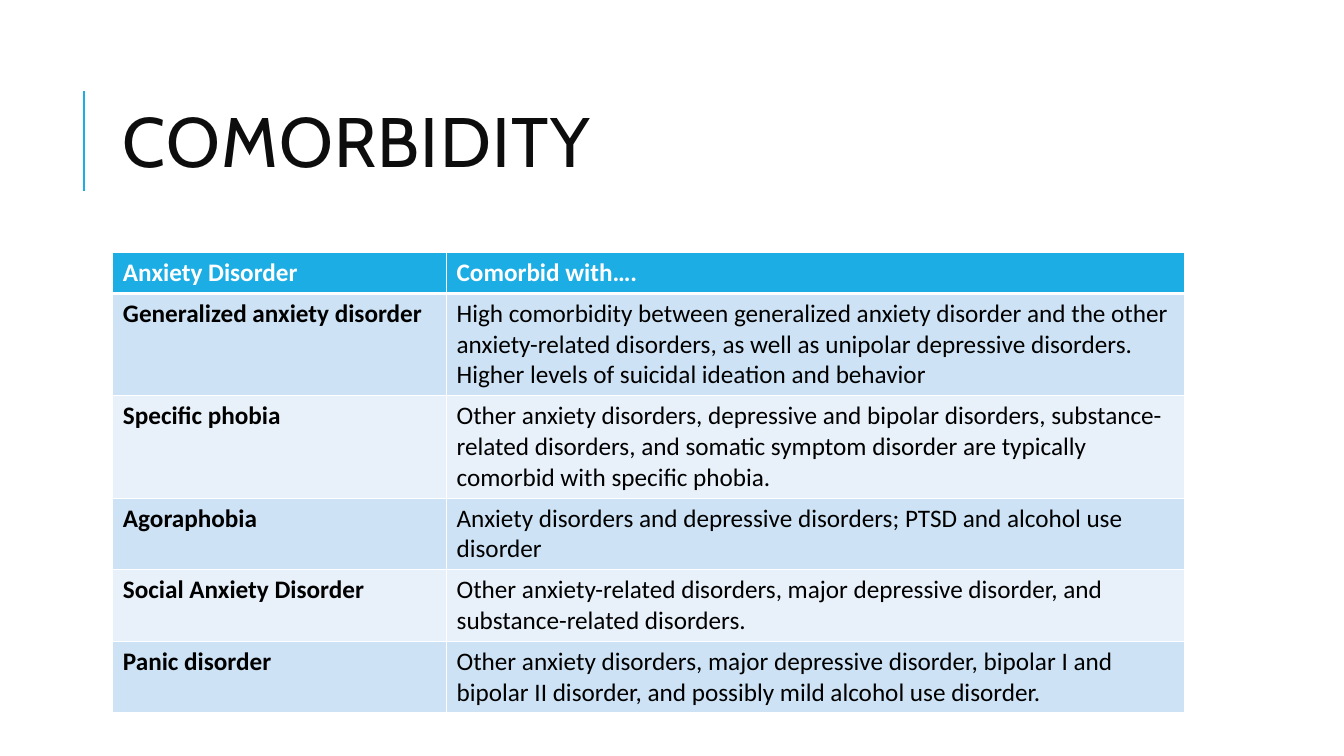
from dataclasses import dataclass

from lxml import etree
from pptx import Presentation
from pptx import util as u
from pptx.dml.color import RGBColor
from pptx.enum import shapes, text
from pptx.oxml import ns


@dataclass(frozen=True)
class Theme:
    accent: str = "1CADE4"
    heading: str = "0D0D0D"
    body: str = "000000"
    white: str = "FFFFFF"
    bands: tuple = ("CDE3F5", "E8F1FA")
    title_font: str = "Cabin"
    body_font: str = "Calibri"
    title_size: int = 50
    body_size: int = 18
    rule: float = 1.5
    thin: int = 1
    thick: int = 3


class Deck:
    def __init__(self, theme):
        self.theme = theme
        self.prs = Presentation()
        self.prs.slide_width = u.Inches(13.33)
        self.prs.slide_height = u.Inches(7.5)
        self.slide = self.prs.slides.add_slide(self.prs.slide_layouts[5])

    def x(self, percent):
        return round(self.prs.slide_width * percent / 100)

    def y(self, percent):
        return round(self.prs.slide_height * percent / 100)

    def add_words(self, paragraph, words, font, size, color, bold=False):
        run = paragraph.add_run()
        run.text = words
        run.font.name = font
        run.font.size = u.Pt(size)
        run.font.bold = bold
        run.font.color.rgb = RGBColor.from_string(color)
        return run

    def title(self, words, left, top, width, height):
        heading = self.slide.shapes.title
        heading.left, heading.top = self.x(left), self.y(top)
        heading.width, heading.height = self.x(width), self.y(height)
        frame = heading.text_frame
        frame.word_wrap = True
        frame.auto_size = text.MSO_AUTO_SIZE.NONE
        frame.vertical_anchor = text.MSO_ANCHOR.MIDDLE
        paragraph = frame.paragraphs[0]
        paragraph.alignment = text.PP_ALIGN.LEFT
        paragraph.line_spacing = 0.8
        run = self.add_words(paragraph, words, self.theme.title_font,
                             self.theme.title_size, self.theme.heading)
        run._r.get_or_add_rPr().set("spc", "100")

    def vertical_rule(self, left, top, bottom):
        rule = self.slide.shapes.add_connector(
            shapes.MSO_CONNECTOR.STRAIGHT,
            self.x(left), self.y(bottom), self.x(left), self.y(top))
        rule.line.color.rgb = RGBColor.from_string(self.theme.accent)
        rule.line.width = u.Pt(self.theme.rule)
        etree.SubElement(rule._element.spPr, ns.qn("a:effectLst"))

    def border(self, cell, side, width):
        line = etree.SubElement(cell._tc.get_or_add_tcPr(),
                                ns.qn(f"a:ln{side}"), w=str(u.Pt(width)))
        fill = etree.SubElement(line, ns.qn("a:solidFill"))
        etree.SubElement(fill, ns.qn("a:srgbClr"), val=self.theme.white)

    def cell(self, cell, words, fill, color, bold, bottom):
        for side in "LRT":
            self.border(cell, side, self.theme.thin)
        self.border(cell, "B", bottom)
        cell.fill.solid()
        cell.fill.fore_color.rgb = RGBColor.from_string(fill)
        self.add_words(cell.text_frame.paragraphs[0], words,
                       self.theme.body_font, self.theme.body_size, color, bold)

    def table(self, rows, left, top, widths, row_height):
        theme = self.theme
        grid = self.slide.shapes.add_table(
            len(rows), len(widths), self.x(left), self.y(top),
            self.x(sum(widths)), self.y(row_height * len(rows))).table
        for column, width in zip(grid.columns, widths):
            column.width = self.x(width)
        for r, row in enumerate(rows):
            header = r == 0
            fill = theme.accent if header else theme.bands[(r - 1) % 2]
            color = theme.white if header else theme.body
            bottom = theme.thick if header else theme.thin
            for c, words in enumerate(row):
                self.cell(grid.cell(r, c), words, fill, color,
                          header or c == 0, bottom)

    def save(self):
        self.prs.save("out.pptx")


COMORBIDITIES = [
    ("Anxiety Disorder", "Comorbid with…."),
    ("Generalized anxiety disorder",
     "High comorbidity between generalized anxiety disorder and the other "
     "anxiety-related disorders, as well as unipolar depressive disorders. "
     "Higher levels of suicidal ideation and behavior"),
    ("Specific phobia",
     "Other anxiety disorders, depressive and bipolar disorders, "
     "substance-related disorders, and somatic symptom disorder are "
     "typically comorbid with specific phobia."),
    ("Agoraphobia",
     "Anxiety disorders and depressive disorders; PTSD and alcohol use "
     "disorder"),
    ("Social Anxiety Disorder",
     "Other anxiety-related disorders, major depressive disorder, and "
     "substance-related disorders."),
    ("Panic disorder",
     "Other anxiety disorders, major depressive disorder, bipolar I and "
     "bipolar II disorder, and possibly mild alcohol use disorder."),
]


def main():
    deck = Deck(Theme())
    deck.vertical_rule(left=6.25, top=12, bottom=25.33)
    deck.title("COMORBIDITY", left=8.4, top=8.53, width=79.74, height=21.87)
    deck.table(COMORBIDITIES, left=8.4, top=33.4,
               widths=(24.83, 54.91), row_height=5.4)
    deck.save()


if __name__ == "__main__":
    main()
